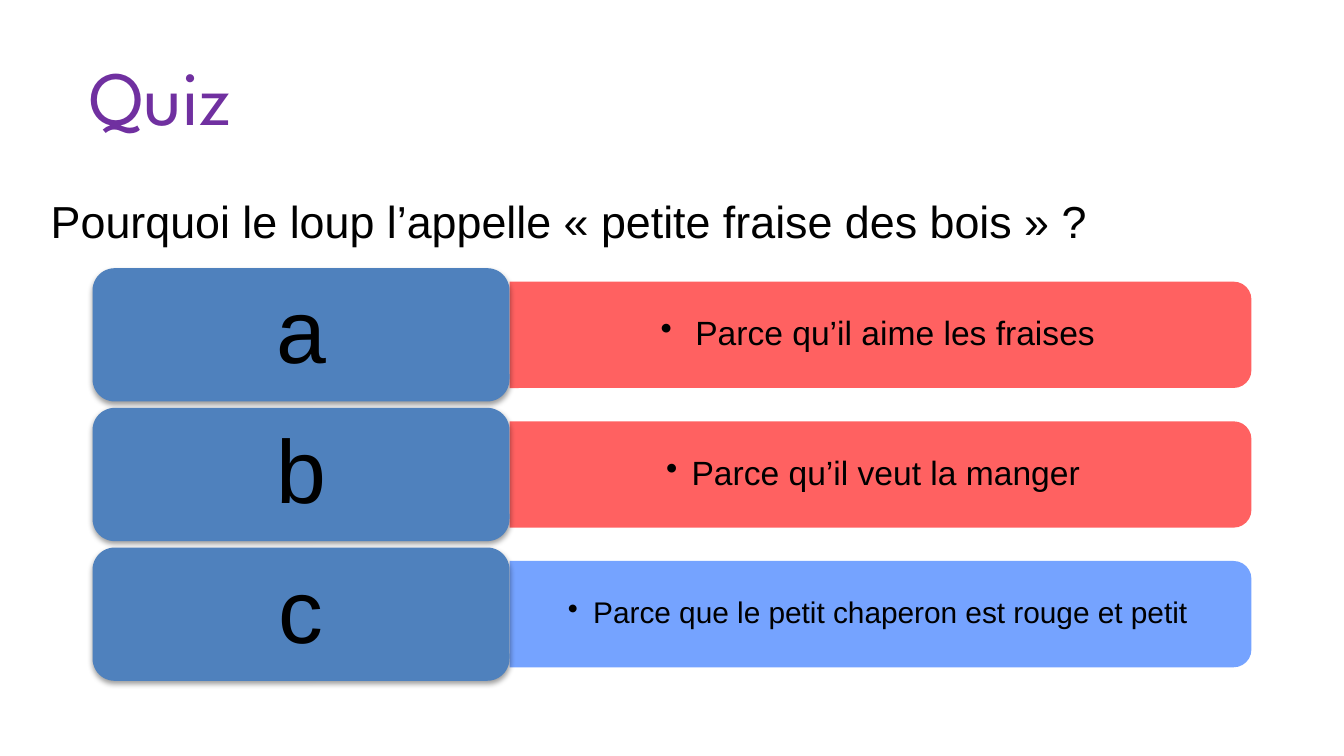
from lxml.etree import SubElement
from pptx import Presentation
from pptx.dml.color import RGBColor
from pptx.enum.shapes import MSO_SHAPE
from pptx.enum.text import MSO_ANCHOR, PP_ALIGN
from pptx.oxml.ns import qn
from pptx.util import Cm, Pt

COLORS = {
    "title": "7030A0",
    "text": "000000",
    "letter": "4F81BD",
    "red": "FF5050",
    "blue": "6699FF",
    "shadow": "000000",
}

ANSWERS = [
    ("a", " Parce qu’il aime les fraises", 18, "red"),
    ("b", "Parce qu’il veut la manger ", 18, "red"),
    ("c", "Parce que le petit chaperon est rouge et petit", 16, "blue"),
]

FIRST_TOP, ROW_STEP = 5.07, 2.64
LETTER_LEFT, LETTER_WIDTH, LETTER_HEIGHT = 1.75, 7.88, 2.52
BAR_LENGTH, BAR_THICKNESS = 14.02, 2.01
ANSWER_WIDTH, ANSWER_HEIGHT = 13.92, 1.81
LETTER_MARGIN = 0.12


def add_alpha(color_element, percent):
    SubElement(color_element, qn("a:alpha"), val=str(percent * 1000))


def add_text(slide, text, box, size, color="text", font="Arial",
             insets=(0, 0), anchor=MSO_ANCHOR.MIDDLE):
    frame = slide.shapes.add_textbox(*map(Cm, box)).text_frame
    frame.word_wrap = True
    frame.vertical_anchor = anchor
    frame.margin_left = frame.margin_right = Cm(insets[0])
    frame.margin_top = frame.margin_bottom = Cm(insets[1])
    frame.text = text
    paragraph = frame.paragraphs[0]
    for run in paragraph.runs:
        run.font.name = font
        run.font.size = Pt(size)
        run.font.color.rgb = RGBColor.from_string(COLORS[color])
    return paragraph


def center(paragraph):
    paragraph.alignment = PP_ALIGN.CENTER
    paragraph.line_spacing = 0.9


def add_bullet(paragraph):
    paragraph.level = 1
    properties = paragraph._p.get_or_add_pPr()
    properties.set("marL", str(Cm(0.48)))
    properties.set("indent", str(-Cm(0.48)))
    SubElement(properties, qn("a:buChar"), char="•")


def add_block(slide, preset, box, color):
    block = slide.shapes.add_shape(preset, *map(Cm, box))
    block.shadow.inherit = False
    block.fill.solid()
    block.fill.fore_color.rgb = RGBColor.from_string(COLORS[color])
    block.line.fill.background()
    return block


def add_drop_shadow(block):
    effects = block._element.spPr.find(qn("a:effectLst"))
    shadow = SubElement(effects, qn("a:outerShdw"), blurRad=str(Pt(3.1)),
                        dist=str(Pt(1.6)), dir="5400000", rotWithShape="0")
    add_alpha(SubElement(shadow, qn("a:srgbClr"), val=COLORS["shadow"]), 38)


def add_answer_bar(slide, left, middle, color):
    box = (left + (BAR_LENGTH - BAR_THICKNESS) / 2, middle - BAR_LENGTH / 2,
           BAR_THICKNESS, BAR_LENGTH)
    bar = add_block(slide, MSO_SHAPE.ROUND_2_SAME_RECTANGLE, box, color)
    bar.rotation = 90
    add_alpha(bar._element.spPr.find(qn("a:solidFill"))[0], 90)


def add_answer(slide, row, letter, answer, size, color):
    top = FIRST_TOP + row * ROW_STEP
    middle = top + LETTER_HEIGHT / 2
    answer_left = LETTER_LEFT + LETTER_WIDTH

    add_answer_bar(slide, answer_left, middle, color)
    answer_box = (answer_left, middle - ANSWER_HEIGHT / 2, ANSWER_WIDTH, ANSWER_HEIGHT)
    answer_line = add_text(slide, answer, answer_box, size, insets=(0.69, 0.36))
    center(answer_line)
    add_bullet(answer_line)

    letter_block = add_block(slide, MSO_SHAPE.ROUNDED_RECTANGLE,
                             (LETTER_LEFT, top, LETTER_WIDTH, LETTER_HEIGHT), "letter")
    add_drop_shadow(letter_block)
    letter_box = (LETTER_LEFT + LETTER_MARGIN, top + LETTER_MARGIN,
                  LETTER_WIDTH - 2 * LETTER_MARGIN, LETTER_HEIGHT - 2 * LETTER_MARGIN)
    center(add_text(slide, letter, letter_box, 48, insets=(0.51, 0.25)))


def main():
    presentation = Presentation()
    presentation.slide_width = Cm(25.4)
    presentation.slide_height = Cm(14.29)
    slide = presentation.slides.add_slide(presentation.slide_layouts[6])

    add_text(slide, "Quiz", (1.7, 0.41, 21.89, 2.77), 41, "title", "League Spartan")
    for row, answer in enumerate(ANSWERS):
        add_answer(slide, row, *answer)
    add_text(slide, "Pourquoi le loup l’appelle « petite fraise des bois » ?",
             (0.71, 3.53, 22.81, 1.27), 24, insets=(0.25, 0.13), anchor=MSO_ANCHOR.TOP)

    presentation.save("out.pptx")


if __name__ == "__main__":
    main()
